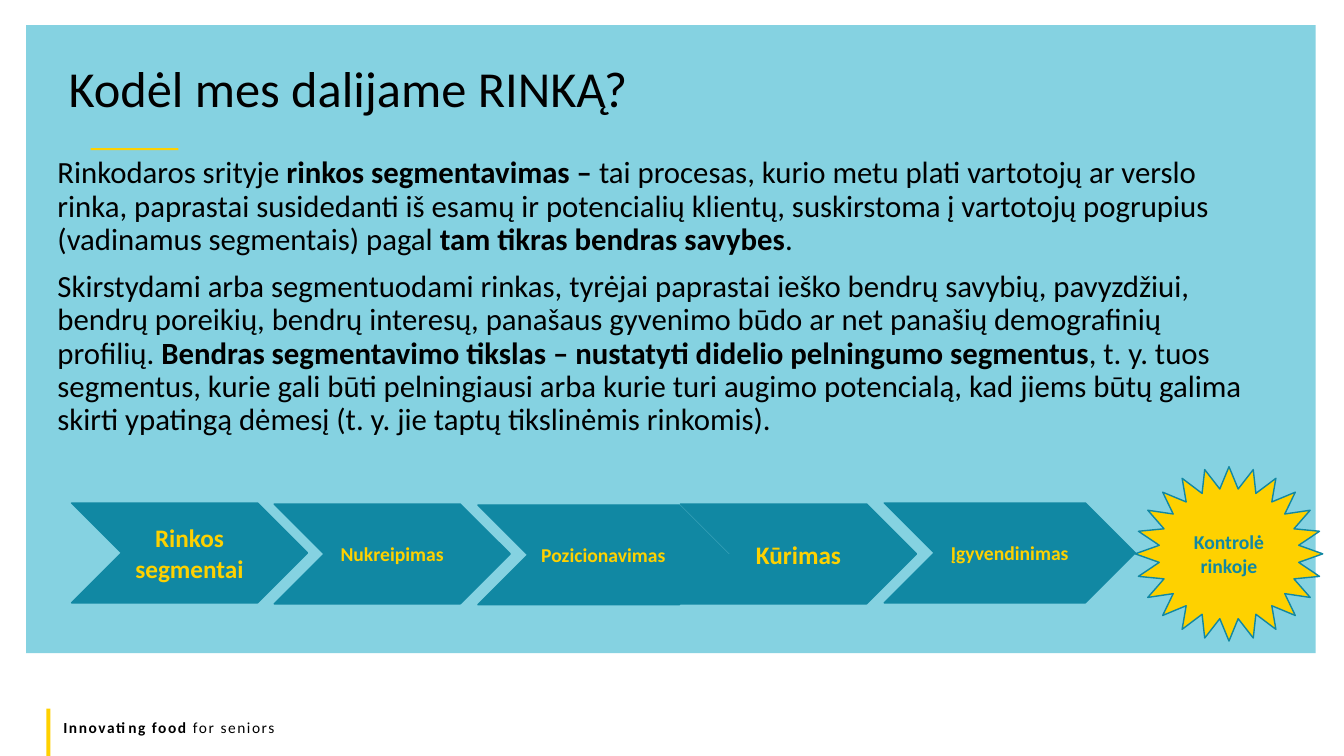
import dataclasses

import pptx
import pptx.dml.color
import pptx.enum.shapes
import pptx.enum.text
import pptx.util

SCALE = 9144  # EMU per px, 100 px to the inch
FONT = "Calibri"
BLACK, YELLOW, GOLD, TEAL, AQUA = "000000", "FFD100", "FED100", "1188A3", "85D2E1"
KIND = pptx.enum.shapes.MSO_SHAPE
ALIGN = pptx.enum.text.PP_ALIGN
ANCHOR = pptx.enum.text.MSO_ANCHOR


@dataclasses.dataclass
class Area:
    left: int
    top: int
    width: int
    height: int

    def emu(self) -> list[int]:
        return [side * SCALE for side in dataclasses.astuple(self)]


@dataclasses.dataclass
class Words:
    text: str
    bold: bool = False


@dataclasses.dataclass
class Step:
    text: str
    area: Area
    size: int = 14
    kind: KIND = KIND.CHEVRON
    fill: str = TEAL
    ink: str = GOLD


TITLE = "Kodėl mes dalijame RINKĄ?"
BODY = [
    [
        Words("Rinkodaros srityje "),
        Words("rinkos segmentavimas –", True),
        Words(" tai procesas, kurio metu plati vartotojų ar verslo rinka, paprastai "
              "susidedanti iš esamų ir potencialių klientų, suskirstoma į vartotojų "
              "pogrupius (vadinamus segmentais) pagal "),
        Words("tam tikras bendras savybes", True),
        Words("."),
    ],
    [
        Words("Skirstydami arba segmentuodami rinkas, tyrėjai paprastai ieško bendrų "
              "savybių, pavyzdžiui, bendrų poreikių, bendrų interesų, panašaus gyvenimo "
              "būdo ar net panašių demografinių profilių. "),
        Words("Bendras segmentavimo tikslas – nustatyti didelio pelningumo segmentus", True),
        Words(", t. y. tuos segmentus, kurie gali būti pelningiausi arba kurie turi augimo "
              "potencialą, kad jiems būtų galima skirti ypatingą dėmesį (t. y. jie taptų "
              "tikslinėmis rinkomis)."),
    ],
]
FOOTER = [Words("Innovating food ", True), Words("for seniors")]
STEPS = [
    Step("Rinkos segmentai", Area(71, 499, 234, 99), size=18),
    Step("Nukreipimas", Area(272, 500, 234, 99)),
    Step("Pozicionavimas", Area(474, 501, 249, 99)),
    Step("Kūrimas", Area(675, 500, 234, 99), size=18),
    Step("Įgyvendinimas", Area(877, 499, 249, 99)),
    Step("Kontrolė rinkoje", Area(1126, 463, 186, 173),
         kind=KIND.STAR_24_POINT, fill=GOLD, ink=TEAL),
]


def colour(code: str) -> pptx.dml.color.RGBColor:
    return pptx.dml.color.RGBColor.from_string(code)


def add_words(para, words: list[Words], size: int, ink: str = BLACK, spacing: int = 0) -> None:
    for piece in words:
        span = para.add_run()
        span.text = piece.text
        span.font.name = FONT
        span.font.size = pptx.util.Pt(size)
        span.font.bold = piece.bold
        span.font.color.rgb = colour(ink)
        if spacing:
            span._r.get_or_add_rPr().set("spc", str(spacing))


def add_shape(page, kind: KIND, area: Area, fill: str, line: str = ""):
    shape = page.shapes.add_shape(kind, *area.emu())
    shape.shadow.inherit = False
    shape.fill.solid()
    shape.fill.fore_color.rgb = colour(fill)
    if line:
        shape.line.color.rgb = colour(line)
        shape.line.width = pptx.util.Pt(1)
    else:
        shape.line.fill.background()
    return shape


def fill_placeholder(box, area: Area, paragraphs: list[list[Words]], size: int,
                     line_spacing: float, anchor: ANCHOR) -> None:
    box.left, box.top, box.width, box.height = area.emu()
    frame = box.text_frame
    frame.auto_size = pptx.enum.text.MSO_AUTO_SIZE.NONE
    frame.word_wrap = True
    frame.vertical_anchor = anchor
    for number, words in enumerate(paragraphs):
        para = frame.add_paragraph() if number else frame.paragraphs[0]
        para.alignment = ALIGN.LEFT
        para.line_spacing = line_spacing
        para.space_before = pptx.util.Pt(10)
        # Plain paragraphs without bullet or indent
        properties = para._p.get_or_add_pPr()
        properties.set("marL", "0")
        properties.set("indent", "0")
        properties.append(pptx.oxml.parse_xml(
            '<a:buNone xmlns:a="http://schemas.openxmlformats.org/drawingml/2006/main"/>'))
        add_words(para, words, size)


def add_step(page, step: Step) -> None:
    shape = add_shape(page, step.kind, step.area, step.fill, TEAL)
    frame = shape.text_frame
    frame.word_wrap = True
    frame.vertical_anchor = ANCHOR.MIDDLE
    para = frame.paragraphs[0]
    para.alignment = ALIGN.CENTER
    add_words(para, [Words(step.text, True)], step.size, step.ink)


def add_footer(page) -> None:
    add_shape(page, KIND.RECTANGLE, Area(46, 703, 4, 47), YELLOW)
    box = page.shapes.add_textbox(*Area(53, 707, 1200, 29).emu())
    box.text_frame.word_wrap = True
    add_words(box.text_frame.paragraphs[0], FOOTER, 11, spacing=110)


def main() -> None:
    deck = pptx.Presentation()
    deck.slide_width, deck.slide_height = 1333 * SCALE, 750 * SCALE
    page = deck.slides.add_slide(deck.slide_layouts[1])
    title, body = page.shapes.title, page.placeholders[1]

    # Panel and accent line, behind the text
    panel = add_shape(page, KIND.RECTANGLE, Area(26, 25, 1279, 623), AQUA)
    accent = add_shape(page, KIND.RECTANGLE, Area(90, 147, 87, 2), YELLOW)
    for backdrop in (panel, accent):
        title.element.addprevious(backdrop.element)

    # Title and body
    fill_placeholder(title, Area(58, 60, 1182, 64), [[Words(TITLE)]], 36, 0.8, ANCHOR.MIDDLE)
    fill_placeholder(body, Area(47, 151, 1215, 423), BODY, 22, 0.9, ANCHOR.TOP)

    # Process chain
    for step in STEPS:
        add_step(page, step)

    add_footer(page)
    deck.save("out.pptx")


if __name__ == "__main__":
    main()
